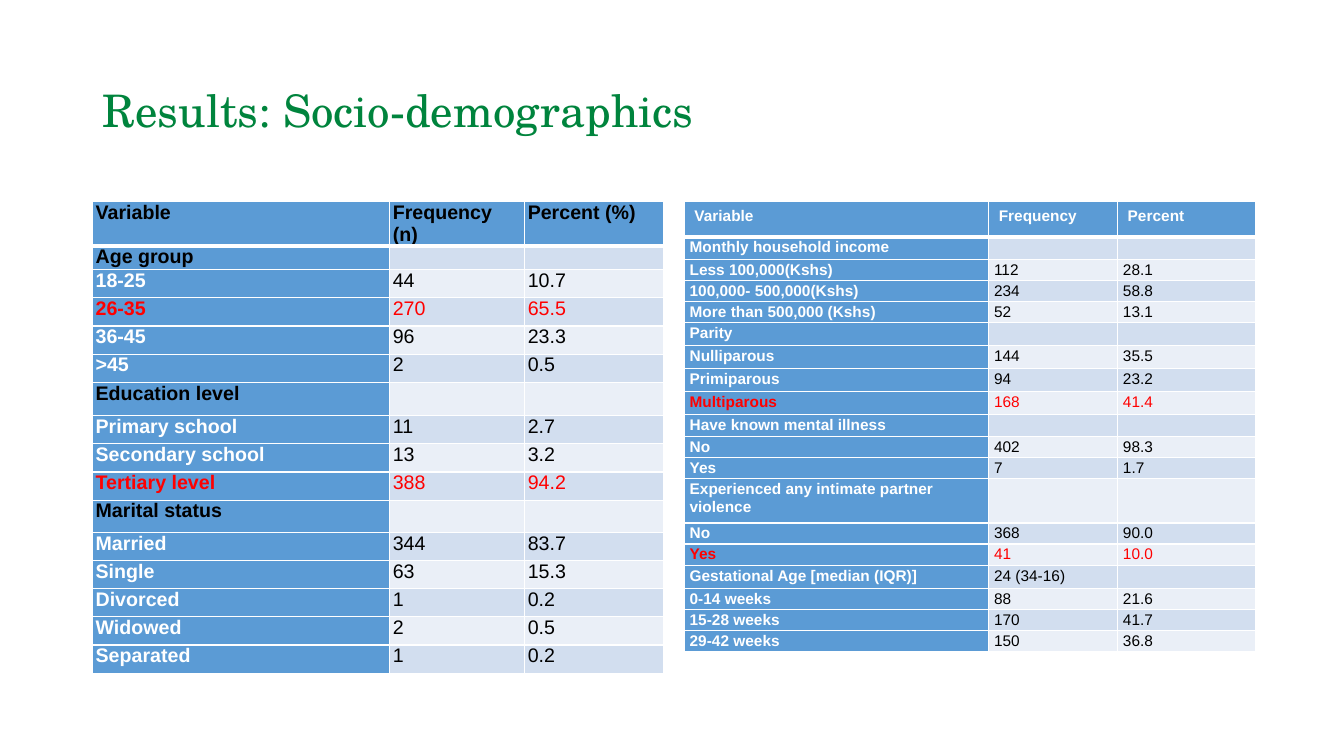
from lxml.etree import SubElement as Sub
from pptx import Presentation
from pptx.dml.color import RGBColor as Rgb
from pptx.enum.text import MSO_ANCHOR as Anchor, PP_ALIGN as Align
from pptx.oxml.ns import qn
from pptx.util import Cm, Pt

BLUE, BAND, PALE = "5B9BD5", "D2DEEF", "EAEFF7"
BLACK, WHITE, RED, GREEN = "000000", "FFFFFF", "FF0000", "00843D"
SIDES = ("left", "right", "top", "bottom")

# Each row: label, frequency, percent. A label alone opens a group.
PEOPLE = [
    ("Variable", "Frequency (n)", "Percent (%)"),
    ("Age group",),
    ("18-25", "44", "10.7"),
    ("26-35", "270", "65.5"),
    ("36-45", "96", "23.3"),
    (">45", "2", "0.5"),
    ("Education level",),
    ("Primary school", "11", "2.7"),
    ("Secondary school", "13", "3.2"),
    ("Tertiary level", "388", "94.2"),
    ("Marital status",),
    ("Married", "344", "83.7"),
    ("Single", "63", "15.3"),
    ("Divorced", "1", "0.2"),
    ("Widowed", "2", "0.5"),
    ("Separated", "1", "0.2"),
]
HEALTH = [
    ("Variable", "Frequency", "Percent"),
    ("Monthly household income",),
    ("Less 100,000(Kshs)", "112", "28.1"),
    ("100,000- 500,000(Kshs)", "234", "58.8"),
    ("More than 500,000 (Kshs)", "52", "13.1"),
    ("Parity",),
    ("Nulliparous", "144", "35.5"),
    ("Primiparous", "94", "23.2"),
    ("Multiparous", "168", "41.4"),
    ("Have known mental illness",),
    ("No", "402", "98.3"),
    ("Yes", "7", "1.7"),
    ("Experienced any intimate partner violence",),
    ("No", "368", "90.0"),
    ("Yes", "41", "10.0"),
    ("Gestational Age [median (IQR)]", "24 (34-16)"),
    ("0-14 weeks", "88", "21.6"),
    ("15-28 weeks", "170", "41.7"),
    ("29-42 weeks", "150", "36.8"),
]

LEFT = dict(
    widths=(7.49, 3.4, 3.51), height=0.71,
    heights={0: 0.97, 1: 0.58, 6: 0.84, 10: 0.81},
    reds=(3, 9), size=14, head=BLACK, para={},
    pads=(0.08, 0.08, 0, 0), top_pads=(0.08, 0.08, 0, 0),
)
RIGHT = dict(
    widths=(7.67, 3.25, 3.48), height=0.53,
    heights={0: 0.89, 1: 0.56, 5: 0.58, 6: 0.58, 7: 0.58, 8: 0.58,
             9: 0.56, 12: 1.12, 15: 0.58},
    reds=(8, 14), size=11, head=WHITE,
    para=dict(line_spacing=1.07, space_after=Pt(8)),
    pads=(0.13, 0.13, 0.02, 0), top_pads=(0.25, 0.25, 0.13, 0.13),
)


def color(code):
    return Rgb.from_string(code)


def assign(item, values):
    for name, value in values.items():
        setattr(item, name, value)


def border(cell, row):
    """Draw white cell edges, heavier between the heading row and the body."""
    props = cell._tc.get_or_add_tcPr()
    for side in "LRTB":
        heavy = (row, side) in ((0, "B"), (1, "T"))
        line = Sub(props, qn(f"a:ln{side}"), w=str(Pt(3 if heavy else 1)))
        Sub(Sub(line, qn("a:solidFill")), qn("a:srgbClr"), val=WHITE)


def write(cell, text, style, ink, bold):
    para = cell.text_frame.paragraphs[0]
    assign(para, style["para"])
    if text:
        run = para.add_run()
        run.text = text
        assign(run.font, dict(name="Arial", size=Pt(style["size"]), bold=bold))
        run.font.color.rgb = color(ink)
    else:
        Sub(para._p, qn("a:endParaRPr"), sz=str(style["size"] * 100))


def add_grid(slide, box, rows, style):
    left, top = box
    widths, base = style["widths"], style["height"]
    heights = [style["heights"].get(n, base) for n in range(len(rows))]
    table = slide.shapes.add_table(
        len(rows), len(widths), Cm(left), Cm(top),
        Cm(sum(widths)), Cm(sum(heights))).table
    table.horz_banding = False
    for col, width in zip(table.columns, widths):
        col.width = Cm(width)
    for r, (row, height) in enumerate(zip(rows, heights)):
        table.rows[r].height = Cm(height)
        pads = style["pads" if r else "top_pads"]
        for c in range(len(widths)):
            cell = table.cell(r, c)
            text = row[c] if c < len(row) else ""
            label = r == 0 or c == 0
            assign(cell, {f"margin_{s}": Cm(p) for s, p in zip(SIDES, pads)})
            border(cell, r)
            cell.fill.solid()
            cell.fill.fore_color.rgb = color(
                BLUE if label else BAND if r % 2 else PALE)
            if r in style["reds"]:
                ink = RED
            elif r == 0 or len(row) == 1:
                ink = style["head"]
            else:
                ink = WHITE if label else BLACK
            write(cell, text, style, ink, label)


def add_title(slide, box, text):
    title = slide.shapes.title
    assign(title, dict(zip(("left", "top", "width", "height"), map(Cm, box))))
    frame = title.text_frame
    frame.text = text
    frame.vertical_anchor = Anchor.MIDDLE
    para = frame.paragraphs[0]
    assign(para, dict(alignment=Align.LEFT, line_spacing=0.9))
    font = para.runs[0].font
    assign(font, dict(name="TeX Gyre Schola", size=Pt(32)))
    font.color.rgb = color(GREEN)


def main():
    deck = Presentation()
    assign(deck, dict(slide_width=Cm(33.87), slide_height=Cm(19.05)))
    slide = deck.slides.add_slide(deck.slide_layouts[5])
    add_title(slide, (2.33, 1.01, 29.21, 3.68), "Results: Socio-demographics")
    add_grid(slide, (2.33, 5.08), PEOPLE, LEFT)
    add_grid(slide, (17.25, 5.08), HEALTH, RIGHT)
    deck.save("out.pptx")


if __name__ == "__main__":
    main()
